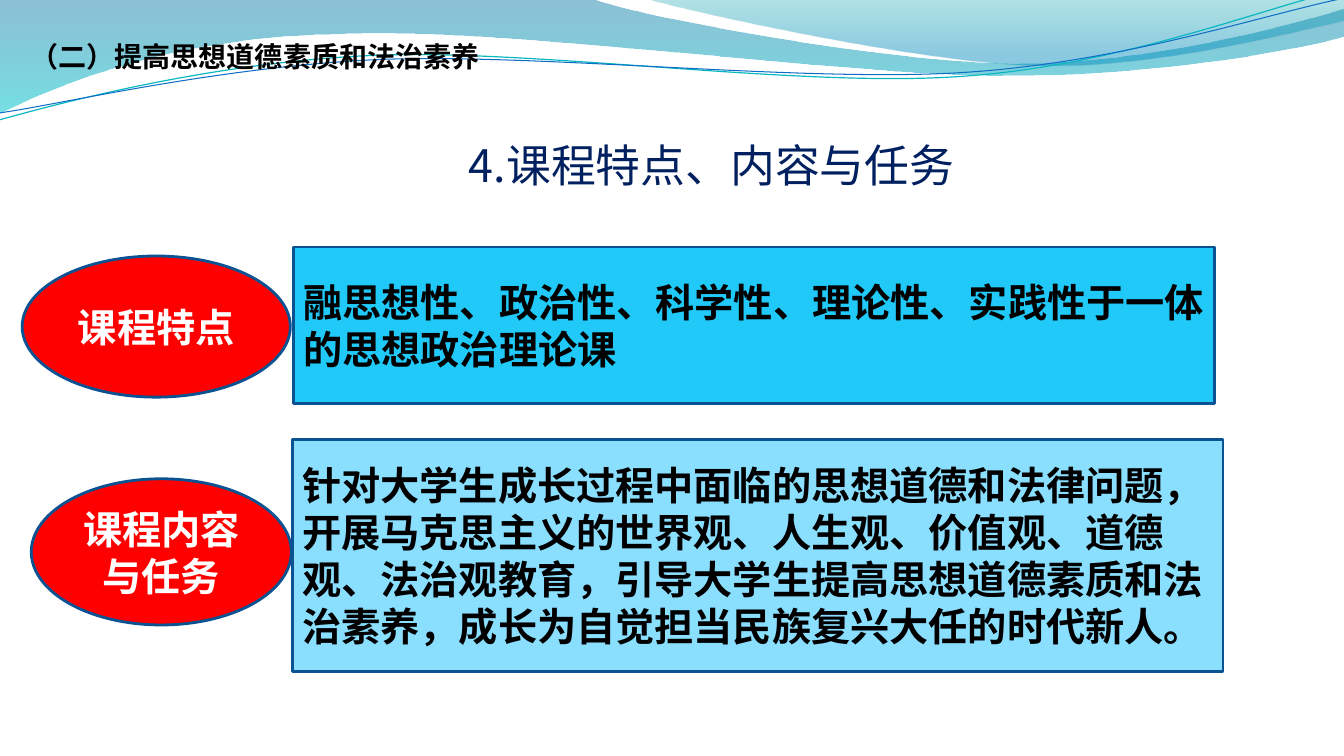
from dataclasses import dataclass

from lxml import etree
from pptx import Presentation
from pptx.dml.color import RGBColor
from pptx.enum import shapes, text
from pptx.oxml.ns import qn
from pptx.util import Inches, Pt


@dataclass(frozen=True)
class Theme:
    """Colours, font and type sizes of the slide."""
    font: str = "Noto Sans CJK SC"
    body_size: int = 28
    title_size: int = 32
    section_size: int = 20
    black: str = "000000"
    white: str = "FFFFFF"
    navy: str = "002060"
    red: str = "FF0000"
    outline: str = "0B5292"
    bright_blue: str = "20C9F8"
    pale_blue: str = "8ADFFF"
    teal_line: str = "0AB8BF"
    blue_line: str = "0F6FC6"
    broad_wave: tuple = ((0, "0074A1", 45), (1, "00C6CF", 55))
    right_wave: tuple = ((0, "00A1A9", 30), (0.8, "008BBF", 45))


THEME = Theme()

BROAD_WAVE = [
    (0, 0), (5.87, -0.01),
    (6.34, 0.17, 8.85, 0.63, 10.11, 0.63), (11.38, 0.63, 12.78, 0.26, 13.33, 0.09),
    (13.35, 0.36),
    (13.11, 0.44, 11.6, 0.76, 9.94, 0.75), (8.29, 0.75, 5.09, 0.28, 3.43, 0.34),
    (1.72, 0.36, 0.61, 0.83, -0.01, 1.13),
]
RIGHT_WAVE = [
    (6.39, -0.01),
    (6.79, 0.11, 9.09, 0.62, 10.25, 0.65), (11.41, 0.69, 12.82, 0.32, 13.33, 0.21),
    (13.33, 0),
]
TEAL_CURVE = [
    (-0.01, 1.19),
    (0.64, 1.01, 2.11, 0.62, 3.69, 0.55), (5.27, 0.48, 7.9, 0.87, 9.5, 0.76),
    (11.1, 0.66, 12.52, 0.08, 13.31, -0.1),
]
BLUE_CURVE = [
    (0, 1.12),
    (0.63, 1.03, 2.18, 0.66, 3.78, 0.59), (5.37, 0.53, 7.96, 0.82, 9.55, 0.72),
    (11.15, 0.62, 12.55, 0.14, 13.34, -0.02),
]


def colour(value):
    """Turn a hex string into an RGB colour."""
    return RGBColor.from_string(value)


def add_outline(slide, box, segments, closed):
    """Draw lines and Bézier segments measured from the box corner."""
    left, top = box[:2]
    ends = [(Inches(left + s[-2]), Inches(top + s[-1])) for s in segments]
    builder = slide.shapes.build_freeform(*ends[0])
    builder.add_line_segments(ends[1:], close=closed)
    shape = builder.convert_to_shape()
    shape.shadow.inherit = False
    lines = list(shape._element.iter(qn("a:lnTo")))
    for line, segment in zip(lines, segments[1:]):
        if len(segment) == 2:
            continue
        line.tag = qn("a:cubicBezTo")
        for index, (x, y) in enumerate((segment[:2], segment[2:4])):
            point = etree.Element(qn("a:pt"))
            point.set("x", str(Inches(left + x) - shape.left))
            point.set("y", str(Inches(top + y) - shape.top))
            line.insert(index, point)
    return shape


def add_wave(slide, box, segments, stops):
    """Draw a translucent wave with a downward gradient."""
    shape = add_outline(slide, box, segments, True)
    shape.line.fill.background()
    shape.fill.gradient()
    shape.fill.gradient_angle = 270
    for stop, (position, value, _) in zip(shape.fill.gradient_stops, stops):
        stop.position = position
        stop.color.rgb = colour(value)
    for element, (_, _, opacity) in zip(shape._element.spPr.iter(qn("a:srgbClr")), stops):
        etree.SubElement(element, qn("a:alpha")).set("val", str(opacity * 1000))


def add_curve(slide, box, segments, value, width):
    """Draw a thin open curve."""
    shape = add_outline(slide, box, segments, False)
    shape.fill.background()
    shape.line.color.rgb = colour(value)
    shape.line.width = Pt(width)


def add_header(slide, box):
    """Draw the waves and curves along the top of the slide."""
    add_wave(slide, box, BROAD_WAVE, THEME.broad_wave)
    add_wave(slide, box, RIGHT_WAVE, THEME.right_wave)
    add_curve(slide, box, TEAL_CURVE, THEME.teal_line, 0.85)
    add_curve(slide, box, BLUE_CURVE, THEME.blue_line, 0.75)


def write(shape, words, size, value, bold, align, anchor=text.MSO_ANCHOR.MIDDLE):
    """Put one formatted paragraph without hanging punctuation into a shape."""
    frame = shape.text_frame
    frame.text = words
    frame.word_wrap = True
    frame.vertical_anchor = anchor
    paragraph = frame.paragraphs[0]
    paragraph.alignment = align
    paragraph._p.get_or_add_pPr().set("hangingPunct", "0")
    font = paragraph.runs[0].font
    font.name, font.size, font.bold = THEME.font, Pt(size), bold
    font.color.rgb = colour(value)
    east_asian = etree.SubElement(font._element, qn("a:ea"))
    east_asian.set("typeface", THEME.font)


def add_block(slide, box, kind, fill, words, value, align):
    """Draw an outlined shape with bold text."""
    shape = slide.shapes.add_shape(kind, *map(Inches, box))
    shape.shadow.inherit = False
    shape.fill.solid()
    shape.fill.fore_color.rgb = colour(fill)
    shape.line.color.rgb = colour(THEME.outline)
    shape.line.width = Pt(2)
    write(shape, words, THEME.body_size, value, True, align)


def add_topic(slide, panel_box, label_box, fill, label, words):
    """Draw a text panel with its oval label."""
    add_block(slide, panel_box, shapes.MSO_SHAPE.RECTANGLE, fill, words,
              THEME.black, text.PP_ALIGN.LEFT)
    add_block(slide, label_box, shapes.MSO_SHAPE.OVAL, THEME.red, label,
              THEME.white, text.PP_ALIGN.CENTER)


def add_title(slide, box):
    """Write the slide title."""
    shape = slide.shapes.add_textbox(*map(Inches, box))
    write(shape, "4.课程特点、内容与任务", THEME.title_size, THEME.navy, False,
          text.PP_ALIGN.CENTER, text.MSO_ANCHOR.BOTTOM)
    frame = shape.text_frame
    frame.margin_left = frame.margin_right = frame.margin_bottom = 0


def add_section(slide, box):
    """Write the section heading."""
    shape = slide.shapes.add_textbox(*map(Inches, box))
    write(shape, "（二）提高思想道德素质和法治素养", THEME.section_size, THEME.black,
          True, text.PP_ALIGN.CENTER)


def main():
    """Build and save the presentation."""
    presentation = Presentation()
    presentation.slide_width = Inches(13.33)
    presentation.slide_height = Inches(7.5)
    slide = presentation.slides.add_slide(presentation.slide_layouts[6])
    add_header(slide, (0, 0, 13.33, 1.2))
    add_topic(slide, (2.91, 2.45, 9.14, 1.55), (0.22, 2.54, 2.66, 1.4),
              THEME.bright_blue, "课程特点",
              "融思想性、政治性、科学性、理论性、实践性于一体的思想政治理论课")
    add_topic(slide, (2.9, 4.36, 9.23, 2.3), (0.31, 4.75, 2.58, 1.45),
              THEME.pale_blue, "课程内容与任务",
              "针对大学生成长过程中面临的思想道德和法律问题，开展马克思主义的世界观、人生观、"
              "价值观、道德观、法治观教育，引导大学生提高思想道德素质和法治素养，"
              "成长为自觉担当民族复兴大任的时代新人。")
    add_title(slide, (2.27, 1.19, 9.58, 0.71))
    add_section(slide, (0, 0.22, 5.06, 0.67))
    presentation.save("out.pptx")


if __name__ == "__main__":
    main()
